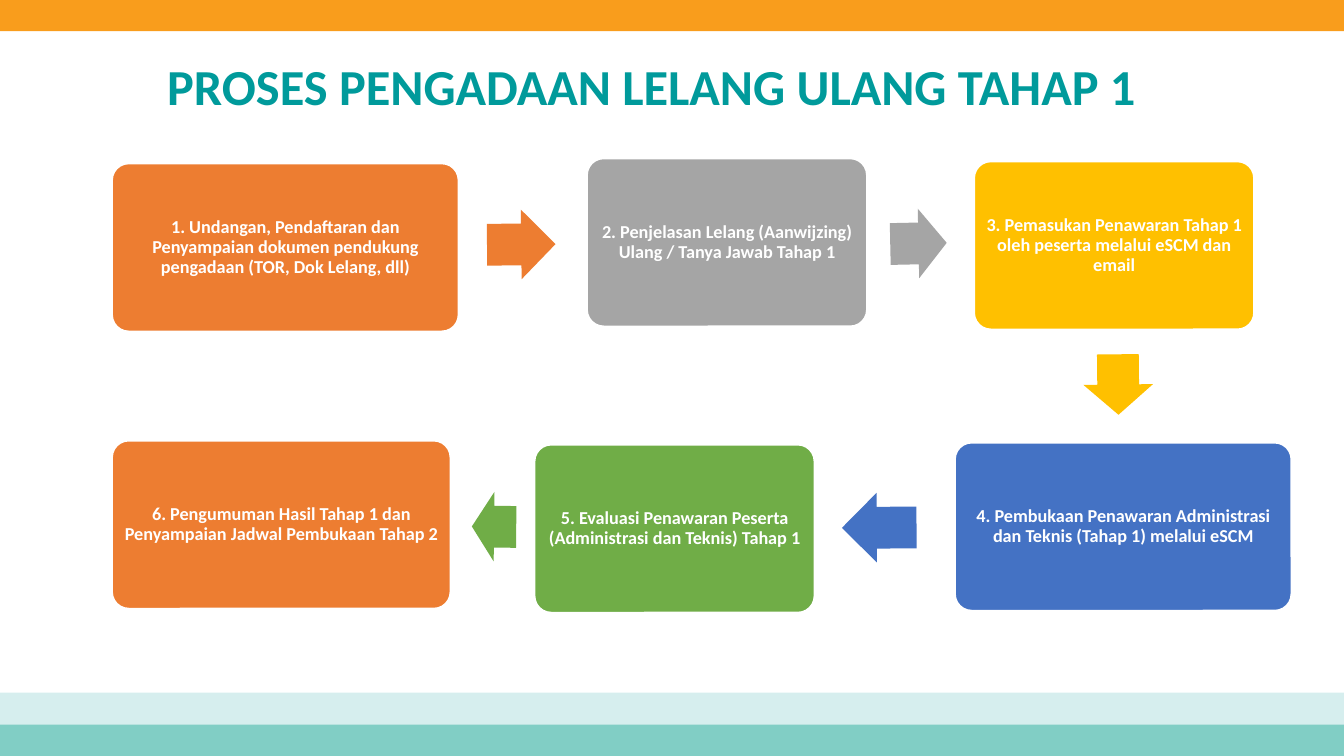
import pptx
import pptx.util
import pptx.dml.color
import pptx.enum.shapes
import pptx.enum.text

Inches, Pt = pptx.util.Inches, pptx.util.Pt
RGB = pptx.dml.color.RGBColor
Kind = pptx.enum.shapes.MSO_SHAPE
Align = pptx.enum.text.PP_ALIGN
Anchor = pptx.enum.text.MSO_ANCHOR

WHITE = RGB(0xFF, 0xFF, 0xFF)
TEAL = RGB(0x00, 0x9A, 0x9B)
MINT = RGB(0x81, 0xCE, 0xC5)
PALE = RGB(0xD6, 0xEE, 0xEE)
AMBER = RGB(0xF9, 0x9D, 0x1C)
ORANGE = RGB(0xED, 0x7D, 0x31)
GRAY = RGB(0xA5, 0xA5, 0xA5)
GOLD = RGB(0xFF, 0xC0, 0x00)
BLUE = RGB(0x44, 0x72, 0xC4)
GREEN = RGB(0x70, 0xAD, 0x47)

# Content
TITLE = "PROSES PENGADAAN LELANG ULANG TAHAP 1"
BANDS = [(7.18, MINT), (6.87, PALE), (-0.01, AMBER)]  # top, colour
# Steps: text, colour, left, top, width
STEPS = [
    ("Undangan, Pendaftaran dan Penyampaian dokumen pendukung "
     "pengadaan (TOR, Dok Lelang, dll)", ORANGE, 1.11, 1.62, 3.44),
    ("Penjelasan Lelang (Aanwijzing) Ulang / Tanya Jawab Tahap 1",
     GRAY, 5.82, 1.57, 2.78),
    ("Pemasukan Penawaran Tahap 1 oleh peserta melalui eSCM dan email",
     GOLD, 9.66, 1.6, 2.78),
    ("Pembukaan Penawaran Administrasi dan Teknis (Tahap 1) melalui eSCM",
     BLUE, 9.47, 4.39, 3.34),
    ("Evaluasi Penawaran Peserta (Administrasi dan Teknis) Tahap 1",
     GREEN, 5.3, 4.41, 2.78),
    ("Pengumuman Hasil Tahap 1 dan Penyampaian Jadwal Pembukaan Tahap 2",
     ORANGE, 1.11, 4.37, 3.36),
]
# Arrow after each step but the last: left, top, length, turn
ARROWS = [
    (4.83, 2.08, 0.68, 359.4),
    (8.83, 2.07, 0.56, 358.8),
    (10.79, 3.47, 0.6, 89.4),
    (8.35, 4.89, 0.74, 179.7),
    (4.68, 4.88, 0.44, 180.6),
]
STEP_H, ARROW_H, BAND_H = 1.67, 0.69, 0.32

deck = pptx.Presentation()
deck.slide_width, deck.slide_height = Inches(13.33), Inches(7.5)
slide = deck.slides.add_slide(deck.slide_layouts[6])


def add_block(kind, left, top, width, height, fill):
    block = slide.shapes.add_shape(
        kind, Inches(left), Inches(top), Inches(width), Inches(height))
    block.shadow.inherit = False
    block.fill.solid()
    block.fill.fore_color.rgb = fill
    block.line.fill.background()
    return block


def put_text(shape, text, size, color, align):
    frame = shape.text_frame
    frame.word_wrap = True
    frame.vertical_anchor = Anchor.MIDDLE
    para = frame.paragraphs[0]
    para.alignment = align
    para.line_spacing = 0.9
    run = para.add_run()
    run.text = text
    run.font.name = "Calibri"
    run.font.size = Pt(size)
    run.font.bold = True
    run.font.color.rgb = color
    return frame


# Bands
for top, fill in BANDS:
    add_block(Kind.RECTANGLE, -0.01, top, 13.35, BAND_H, fill)

# Title
title = slide.shapes.add_textbox(
    Inches(1.56), Inches(0.49), Inches(9.91), Inches(0.78))
put_text(title, TITLE, 36, TEAL, Align.LEFT)

# Steps
for num, (text, fill, left, top, width) in enumerate(STEPS, 1):
    step = add_block(Kind.ROUNDED_RECTANGLE, left, top, width, STEP_H, fill)
    step.adjustments[0] = 0.1
    step.line.color.rgb = WHITE
    step.line.width = Pt(1.5)
    frame = put_text(step, f"{num}. {text}", 13, WHITE, Align.CENTER)
    frame.margin_left = frame.margin_right = Inches(0.05)
    frame.margin_top = frame.margin_bottom = Inches(0.05)

# Arrows take the colour of the step they leave
for (left, top, length, turn), step in zip(ARROWS, STEPS):
    arrow = add_block(Kind.RIGHT_ARROW, left, top, length, ARROW_H, step[1])
    arrow.adjustments[0] = 0.6
    arrow.adjustments[1] = 0.5
    arrow.rotation = turn

deck.save("out.pptx")
